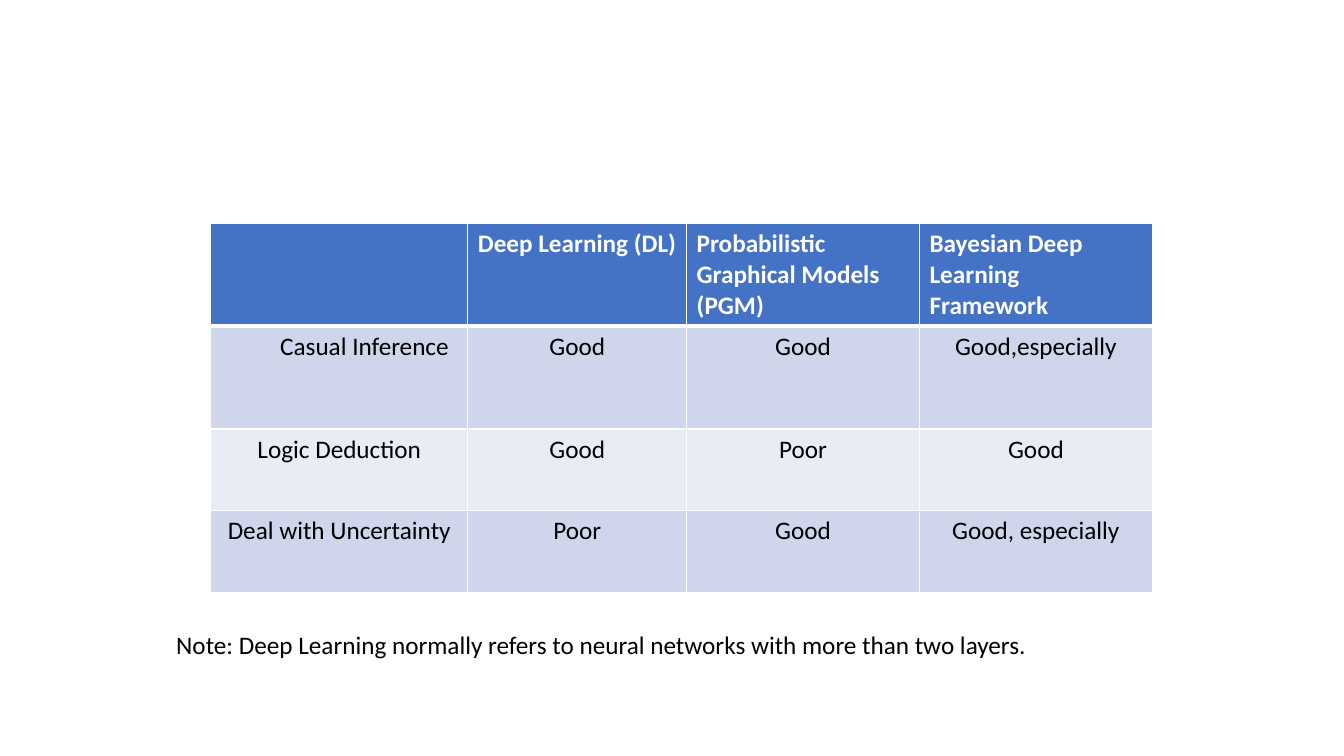
from lxml import etree
from pptx import Presentation
from pptx import util as u
from pptx.dml import color
from pptx.enum import text
from pptx.oxml import ns

COLUMN_WIDTHS = [2.55, 2.17, 2.31, 2.31]
ROW_HEIGHTS = [1.01, 1.02, 0.81, 0.81]
ROWS = [
    ["", "Deep Learning (DL)", "Probabilistic Graphical Models (PGM)",
     "Bayesian Deep Learning Framework"],
    ["Casual Inference", "Good", "Good", "Good,especially"],
    ["Logic Deduction", "Good", "Poor", "Good"],
    ["Deal with Uncertainty", "Poor", "Good", "Good, especially"],
]


def rgb(value):
    return color.RGBColor.from_string(value)


class SlideBuilder:
    """Holds the style and the current slide, and adds elements to it."""

    font, size = "Calibri", 18
    white, black, header = "FFFFFF", "000000", "4472C4"
    bands = ["E9EBF5", "CFD5EA"]

    def __init__(self, slide):
        self.slide = slide

    def format_text(self, paragraph, hue, bold=False):
        for run in paragraph.runs:
            run.font.name = self.font
            run.font.size = u.Pt(self.size)
            run.font.bold = bold
            run.font.color.rgb = rgb(hue)

    def add_borders(self, cell, widths):
        properties = cell._tc.get_or_add_tcPr()
        for index, (side, width) in enumerate(widths.items()):
            line = etree.Element(ns.qn(f"a:ln{side}"), w=str(u.Pt(width)))
            fill = etree.SubElement(line, ns.qn("a:solidFill"))
            etree.SubElement(fill, ns.qn("a:srgbClr"), val=self.white)
            properties.insert(index, line)

    def add_table(self, left, top, widths, heights, rows):
        frame = self.slide.shapes.add_table(
            len(rows), len(widths), u.Inches(left), u.Inches(top),
            u.Inches(sum(widths)), u.Inches(sum(heights)))
        table = frame.table
        for column, width in zip(table.columns, widths):
            column.width = u.Inches(width)
        for row, height in zip(table.rows, heights):
            row.height = u.Inches(height)
        for r, values in enumerate(rows):
            for c, value in enumerate(values):
                self.fill_cell(table.cell(r, c), value, r)
        return table

    def fill_cell(self, cell, value, row):
        is_header = row == 0
        cell.text_frame.text = value
        paragraph = cell.text_frame.paragraphs[0]
        if not is_header:
            paragraph.alignment = text.PP_ALIGN.CENTER
        self.format_text(paragraph, self.white if is_header else self.black, is_header)
        cell.fill.solid()
        cell.fill.fore_color.rgb = rgb(self.header if is_header else self.bands[row % 2])
        self.add_borders(cell, {"L": 1, "R": 1, "T": 3 if row == 1 else 1,
                                "B": 3 if is_header else 1})

    def indent(self, paragraph, level, left):
        paragraph.level = level
        properties = paragraph._p.get_or_add_pPr()
        properties.set("marL", str(u.Inches(left)))
        properties.set("indent", "0")

    def add_note(self, left, top, width, height, value):
        box = self.slide.shapes.add_textbox(*map(u.Inches, (left, top, width, height)))
        box.text_frame.word_wrap = True
        box.text_frame.text = value
        self.format_text(box.text_frame.paragraphs[0], self.black)


def main():
    presentation = Presentation()
    presentation.slide_width = u.Inches(13.33)
    presentation.slide_height = u.Inches(7.5)
    builder = SlideBuilder(presentation.slides.add_slide(presentation.slide_layouts[6]))
    table = builder.add_table(2.09, 2.22, COLUMN_WIDTHS, ROW_HEIGHTS, ROWS)
    builder.indent(table.cell(1, 0).text_frame.paragraphs[0], 1, 0.5)
    builder.add_note(1.65, 6.19, 10.14, 0.71,
                     "Note: Deep Learning normally refers to neural networks "
                     "with more than two layers.")
    presentation.save("out.pptx")


if __name__ == "__main__":
    main()
